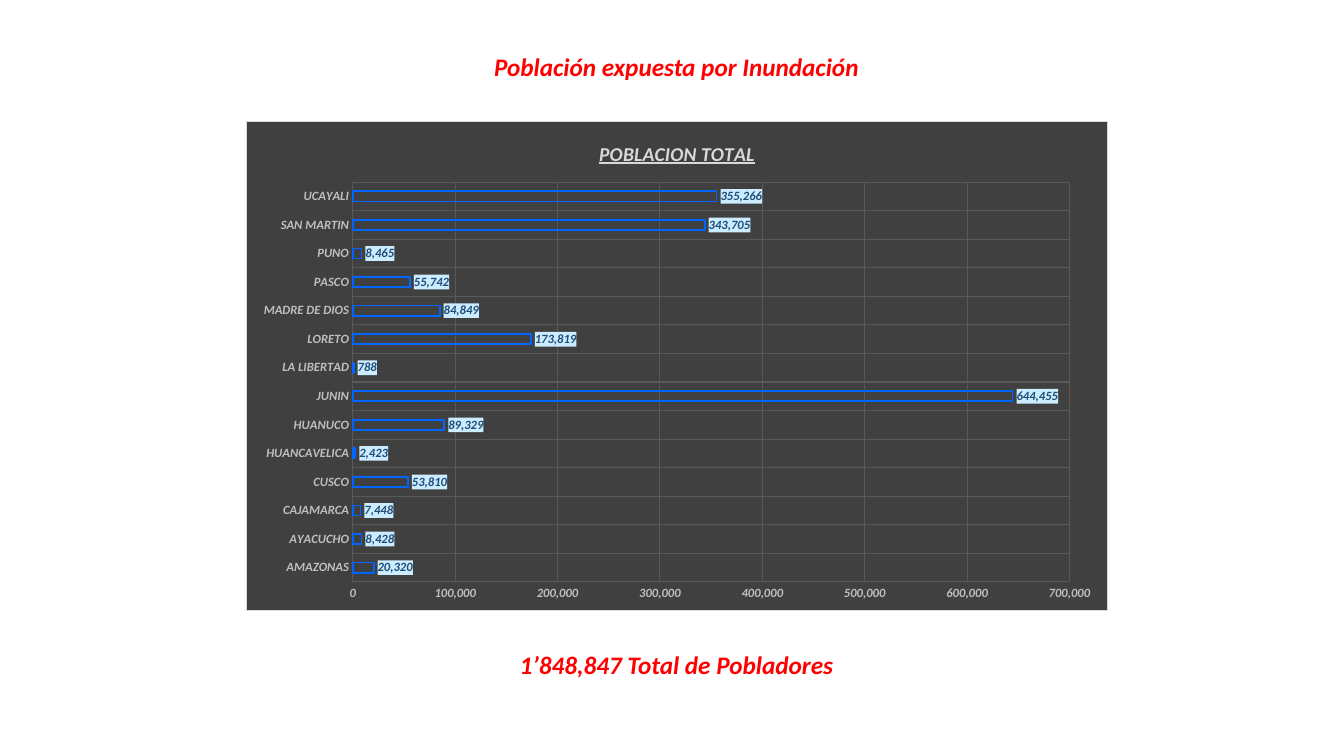
from lxml import etree
from pptx import Presentation
from pptx.chart.data import CategoryChartData
from pptx.dml.color import RGBColor
from pptx.enum.chart import XL_CHART_TYPE, XL_LABEL_POSITION, XL_TICK_MARK
from pptx.enum.text import MSO_AUTO_SIZE, PP_ALIGN
from pptx.oxml import parse_xml
from pptx.oxml.ns import nsdecls, qn
from pptx.util import Inches, Pt

BAR = XL_CHART_TYPE.BAR_CLUSTERED
OUTSIDE_END = XL_LABEL_POSITION.OUTSIDE_END
NO_TICK = XL_TICK_MARK.NONE
CENTER = PP_ALIGN.CENTER
FIT_SHAPE = MSO_AUTO_SIZE.SHAPE_TO_FIT_TEXT

COLORS = {
    "heading": "FF0000",
    "panel": "404040",
    "border": "D9D9D9",
    "title": "D9D9D9",
    "axis": "BFBFBF",
    "grid": "595959",
    "bar": "0066FF",
    "label": "1F4E79",
    "label_fill": "CCECFF",
}
POPULATION = {
    "AMAZONAS": 20320,
    "AYACUCHO": 8428,
    "CAJAMARCA": 7448,
    "CUSCO": 53810,
    "HUANCAVELICA": 2423,
    "HUANUCO": 89329,
    "JUNIN": 644455,
    "LA LIBERTAD": 788,
    "LORETO": 173819,
    "MADRE DE DIOS": 84849,
    "PASCO": 55742,
    "PUNO": 8465,
    "SAN MARTIN": 343705,
    "UCAYALI": 355266,
}


class SlideBuilder:
    """Hold the style and the current page, and add elements to it."""

    font_name = "Calibri"
    number_format = "#,##0"

    def __init__(self, page):
        self.page = page

    def style_font(self, font, size, color):
        font.name = self.font_name
        font.size = Pt(size)
        font.bold = font.italic = True
        font.color.rgb = RGBColor.from_string(COLORS[color])

    def add_heading(self, text, left, top, width, height, wrap=True):
        box = self.page.shapes.add_textbox(
            Inches(left), Inches(top), Inches(width), Inches(height))
        frame = box.text_frame
        frame.word_wrap = wrap
        frame.auto_size = FIT_SHAPE
        para = frame.paragraphs[0]
        para.alignment = CENTER
        span = para.add_run()
        span.text = text
        self.style_font(span.font, 18, "heading")

    def shape_properties(self, fill, border=None):
        properties = parse_xml(
            f'<c:spPr {nsdecls("c", "a")}><a:solidFill>'
            f'<a:srgbClr val="{COLORS[fill]}"/></a:solidFill></c:spPr>')
        line = etree.SubElement(properties, qn("a:ln"), w=str(Pt(0.75)))
        if border:
            solid = etree.SubElement(line, qn("a:solidFill"))
            etree.SubElement(solid, qn("a:srgbClr"), val=COLORS[border])
        else:
            etree.SubElement(line, qn("a:noFill"))
        return properties

    def style_axis(self, axis):
        axis.major_tick_mark = axis.minor_tick_mark = NO_TICK
        axis.format.line.fill.background()
        axis.has_major_gridlines = True
        grid = axis.major_gridlines.format.line
        grid.width = Pt(0.75)
        grid.color.rgb = RGBColor.from_string(COLORS["grid"])
        self.style_font(axis.tick_labels.font, 9, "axis")

    def style_labels(self, plot):
        plot.has_data_labels = True
        labels = plot.data_labels
        labels.show_value = True
        labels.position = OUTSIDE_END
        labels.number_format = self.number_format
        labels.number_format_is_linked = False
        self.style_font(labels.font, 9, "label")
        text = labels._element.find(qn("c:txPr"))
        text.addprevious(self.shape_properties("label_fill"))

    def add_bar_chart(self, title, values, left, top, width, height):
        data = CategoryChartData(number_format=self.number_format)
        data.categories = list(values)
        data.add_series("Series 1", list(values.values()))
        chart = self.page.shapes.add_chart(
            BAR, Inches(left), Inches(top), Inches(width), Inches(height),
            data).chart
        chart.has_legend = False
        chart.font.name = self.font_name
        chart.font.size = Pt(10)
        chart.has_title = True
        chart.chart_title.include_in_layout = False
        span = chart.chart_title.text_frame.paragraphs[0].add_run()
        span.text = title
        self.style_font(span.font, 14, "title")
        span.font.underline = True

        plot = chart.plots[0]
        plot.vary_by_categories = False
        plot.gap_width = 182
        plot.overlap = -50
        bars = plot.series[0].format
        bars.fill.background()
        bars.line.width = Pt(1.25)
        bars.line.color.rgb = RGBColor.from_string(COLORS["bar"])
        self.style_labels(plot)

        for axis in (chart.category_axis, chart.value_axis):
            self.style_axis(axis)
        chart.value_axis.minimum_scale = 0
        chart.value_axis.maximum_scale = 700000
        chart.value_axis.major_unit = 100000
        chart.value_axis.tick_labels.number_format = self.number_format
        chart.value_axis.tick_labels.number_format_is_linked = False
        body = chart.element.find(qn("c:chart"))
        body.addnext(self.shape_properties("panel", "border"))


def main():
    deck = Presentation()
    deck.slide_width = Inches(13.33)
    deck.slide_height = Inches(7.5)
    builder = SlideBuilder(deck.slides.add_slide(deck.slide_layouts[6]))
    builder.add_heading(
        "Población expuesta por Inundación", 4.78, 0.46, 3.86, 0.4, wrap=False)
    builder.add_heading(
        "1’848,847 Total de Pobladores", 5.03, 6.39, 3.36, 0.4)
    builder.add_bar_chart("POBLACION TOTAL", POPULATION, 2.44, 1.2, 8.55, 4.86)
    deck.save("out.pptx")


if __name__ == "__main__":
    main()
